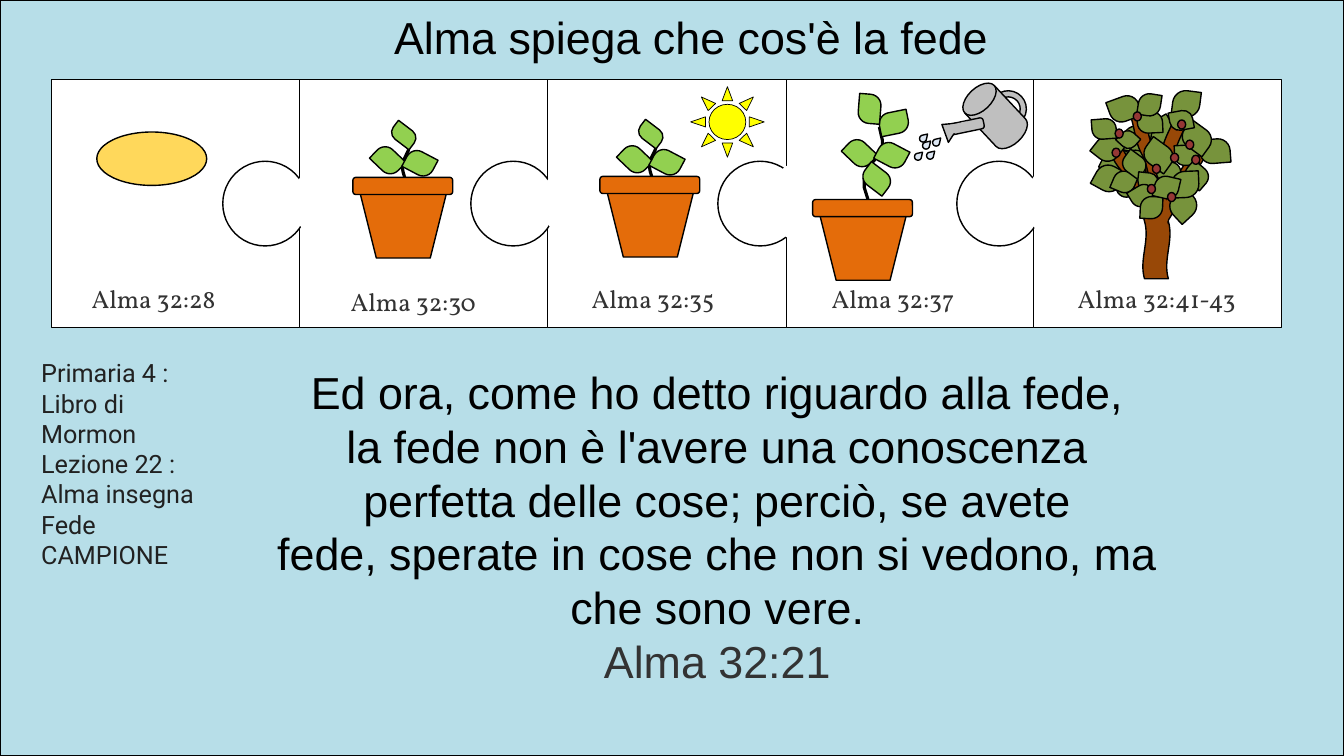
import math

import pptx
import pptx.dml.color
import pptx.enum.shapes
import pptx.enum.text
import pptx.util

RGB = pptx.dml.color.RGBColor
SHAPE = pptx.enum.shapes.MSO_SHAPE
ALIGN = pptx.enum.text.PP_ALIGN
Cm, Pt = pptx.util.Cm, pptx.util.Pt

CM_PER_INCH = 2.54
NO_BREAK_SPACE = chr(160)
STEM_ANGLE = 339.5
BLACK = RGB(0, 0, 0)
WHITE = RGB(0xFF, 0xFF, 0xFF)
SKY = RGB(0xB7, 0xDE, 0xE8)
SEED = RGB(0xFF, 0xD8, 0x5B)
SPROUT = RGB(0x92, 0xD0, 0x50)
CLAY = RGB(0xE4, 0x6C, 0x0A)
SUNLIGHT = RGB(0xFF, 0xFF, 0)
METAL = RGB(0xBF, 0xBF, 0xBF)
WATER = RGB(0xDC, 0xE6, 0xF2)
FOLIAGE = RGB(0x77, 0x93, 0x3C)
BARK = RGB(0x98, 0x48, 0x07)
BERRY = RGB(0x95, 0x37, 0x35)
GREY = RGB(0x33, 0x33, 0x33)
INK = RGB(0x21, 0x21, 0x21)


def draw(shapes, kind, box, fill, angle=0, line=BLACK, line_width=1, adjust=None):
    """Add a preset shape; box is left, top, width, height in inches."""
    shape = shapes.add_shape(kind, *[Cm(v * CM_PER_INCH) for v in box])
    shape.shadow.inherit = False
    shape.rotation = angle
    shape.fill.solid()
    shape.fill.fore_color.rgb = fill
    if line is None:
        shape.line.fill.background()
    else:
        shape.line.color.rgb = line
        shape.line.width = Pt(line_width)
    if kind == SHAPE.ROUND_2_DIAG_RECTANGLE:
        adjust = 0.5
    if adjust is not None:
        shape.adjustments[0] = adjust


def write(box, paragraphs, font, size, wrap=False, align=ALIGN.LEFT):
    """Add a text box; paragraphs are (text, colour) pairs, ~ is a no-break space."""
    frame = slide.shapes.add_textbox(*[Cm(v * CM_PER_INCH) for v in box]).text_frame
    frame.word_wrap = wrap
    frame.auto_size = pptx.enum.text.MSO_AUTO_SIZE.SHAPE_TO_FIT_TEXT
    for number, (text, colour) in enumerate(paragraphs):
        paragraph = frame.add_paragraph() if number else frame.paragraphs[0]
        paragraph.alignment = align
        run = paragraph.add_run()
        run.text = text.replace("~", NO_BREAK_SPACE)
        run.font.name = font
        run.font.size = Pt(size)
        run.font.color.rgb = colour


presentation = pptx.Presentation()
presentation.slide_width = Cm(13.33 * CM_PER_INCH)
presentation.slide_height = Cm(7.5 * CM_PER_INCH)
slide = presentation.slides.add_slide(presentation.slide_layouts[6])
draw(slide.shapes, SHAPE.RECTANGLE, (0, 0, 13.33, 7.5), SKY)

# Puzzle pieces: panels, their tabs, and the openings that cut the tabs
puzzle = slide.shapes.add_group_shape().shapes
for left in (0.51, 2.97, 5.43, 7.8, 10.25):
    draw(puzzle, SHAPE.RECTANGLE, (left, 0.79, 2.46, 2.46), WHITE)
for left in (2.21, 4.67, 7.12, 9.49):
    draw(puzzle, SHAPE.OVAL, (left, 1.6, 0.84, 0.84), WHITE)
for left in (2.91, 5.38, 7.62, 10.18):
    draw(puzzle, SHAPE.OVAL, (left, 1.58, 0.84, 0.84), WHITE, line=WHITE)

draw(slide.shapes, SHAPE.OVAL, (0.96, 1.31, 1.09, 0.53), SEED)
draw(slide.shapes, SHAPE.SUN, (6.85, 0.86, 0.73, 0.7), SUNLIGHT, line_width=0.5)

# Potted plants: leaves and stem centres are measured from the corner of the pot rim,
# stem points from the stem centre as they stand after the stem is turned
young_stem = [(-0.01, 0.28), (0, 0.25), (-0.01, 0.2), (-0.04, 0.1), (-0.05, 0.04), (-0.04, 0.03),
              (-0.03, -0.03), (-0.01, -0.07), (0.01, -0.11), (0.02, -0.15), (0.02, -0.19), (0, -0.27)]
young_leaves = [(0.2, -0.28, 0.29, 0.22, 43.7), (0.52, -0.25, 0.29, 0.22, 27.8),
                (0.42, -0.55, 0.17, 0.26, 307.3)]
tall_stem = [(-0.06, 0.44), (-0.04, 0.38), (-0.04, 0.31), (-0.09, 0.15), (-0.09, 0.06), (-0.08, 0.04),
             (-0.05, -0.06), (0.01, -0.12), (0.05, -0.19), (0.09, -0.26), (0.09, -0.32), (0.06, -0.45)]
tall_leaves = [(0.32, -0.57, 0.29, 0.22, 43.7), (0.64, -0.55, 0.29, 0.22, 27.8),
               (0.53, -0.35, 0.21, 0.29, 307.3), (0.66, -0.87, 0.29, 0.22, 348.6),
               (0.42, -1.01, 0.29, 0.22, 274.6)]
cosine, sine = math.cos(math.radians(STEM_ANGLE)), math.sin(math.radians(STEM_ANGLE))
for x, y, centre_x, centre_y, stem, leaves in (
        (3.5, 1.76, 0.54, -0.15, young_stem, young_leaves),
        (5.95, 1.75, 0.54, -0.15, young_stem, young_leaves),
        (8.06, 1.98, 0.6, -0.27, tall_stem, tall_leaves)):
    plant = slide.shapes.add_group_shape().shapes
    points = [(Cm((x + centre_x + dx * cosine + dy * sine) * CM_PER_INCH),
               Cm((y + centre_y - dx * sine + dy * cosine) * CM_PER_INCH)) for dx, dy in stem]
    builder = plant.build_freeform(*points[0])
    builder.add_line_segments(points[1:], close=False)
    stalk = builder.convert_to_shape()
    stalk.rotation = STEM_ANGLE
    stalk.shadow.inherit = False
    stalk.fill.background()
    stalk.line.color.rgb = BLACK
    stalk.line.width = Pt(2.25)
    draw(plant, SHAPE.TRAPEZOID, (x + 0.04, y + 0.03, 0.92, 0.77), CLAY, 180)
    draw(plant, SHAPE.ROUNDED_RECTANGLE, (x, y, 0.99, 0.17), CLAY)
    for dx, dy, width, height, angle in leaves:
        draw(plant, SHAPE.ROUND_2_DIAG_RECTANGLE, (x + dx, y + dy, width, height), SPROUT, angle)

# Watering can
can = slide.shapes.add_group_shape().shapes
draw(can, SHAPE.DONUT, (9.82, 0.9, 0.36, 0.36), METAL, 316.9, adjust=0.169)
draw(can, SHAPE.FLOWCHART_MAGNETIC_DISK, (9.67, 0.81, 0.4, 0.68), METAL, 316.9)
draw(can, SHAPE.ROUNDED_RECTANGLE, (9.52, 1.07, 0.11, 0.37), METAL, 258.2, adjust=0.258)
draw(can, SHAPE.ISOSCELES_TRIANGLE, (9.29, 1.2, 0.23, 0.15), METAL, 302.6)
draw(can, SHAPE.ROUNDED_RECTANGLE, (9.47, 1.17, 0.09, 0.19), METAL, 258.2, line=None, adjust=0.258)
for left, top in ((9.15, 1.41), (9.25, 1.38), (9.12, 1.34), (9.07, 1.52), (9.19, 1.51)):
    draw(can, SHAPE.TEAR, (left, top, 0.07, 0.07), WATER, adjust=1.286)

# Tree, from back to front; each row is left, top, width, height, angle
back_leaves = [
    (11.58, 1.31, 0.24, 0.3, 85.5), (11.38, 1.18, 0.27, 0.26, 329.9), (11.14, 1.25, 0.27, 0.26, 10.4),
    (11.15, 1.49, 0.22, 0.22, 15.3), (10.94, 1.47, 0.27, 0.26, 26.4), (10.86, 1.64, 0.27, 0.26, 28.9),
    (11.09, 1.73, 0.2, 0.24, 71.7)]
branches = [
    (10.9, 2.06, 1.14, 0.27, 270), (10.72, 1.6, 0.95, 0.15, 235.5), (11.24, 1.76, 0.95, 0.15, 298.7),
    (11.11, 1.45, 0.95, 0.15, 289.4), (10.91, 1.43, 0.95, 0.15, 252.4)]
crown_leaves = [
    (10.86, 1.35, 0.25, 0.25, 38.2), (11.63, 0.9, 0.27, 0.26, 187.3), (11.03, 0.93, 0.24, 0.3, 69.8),
    (11.1, 1.3, 0.18, 0.17, 42.2), (10.85, 1.16, 0.2, 0.24, 85.5), (11.3, 1.09, 0.21, 0.25, 87.1),
    (11.04, 1.7, 0.22, 0.21, 22.8), (11.15, 1.51, 0.2, 0.24, 126.4), (11.49, 1.59, 0.2, 0.24, 87.1),
    (11.37, 1.39, 0.24, 0.3, 126), (11.29, 0.93, 0.22, 0.22, 8.9), (11.67, 1.42, 0.2, 0.24, 87.1),
    (11.93, 1.35, 0.24, 0.3, 85.5), (11.75, 1.22, 0.24, 0.3, 126), (11.62, 1.08, 0.19, 0.23, 79.4),
    (11.77, 1.62, 0.2, 0.24, 130.9)]
low_leaves = [
    (11.3, 1.7, 0.17, 0.2, 276.1), (11.23, 1.82, 0.2, 0.24, 238.6), (11.6, 1.91, 0.27, 0.26, 137.2),
    (11.62, 1.7, 0.27, 0.26, 177.7), (11.31, 1.95, 0.22, 0.22, 182.6), (11.45, 1.75, 0.24, 0.22, 193.2)]
berries = [(left, top, 0.08, 0.09, 0) for left, top in (
    (11.03, 1.47), (11.82, 1.54), (11.76, 1.39), (11.06, 1.28), (11.24, 1.11),
    (11.68, 1.19), (11.43, 1.63), (11.61, 1.52), (11.38, 1.83), (11.58, 1.91))]
tree = slide.shapes.add_group_shape().shapes
for kind, fill, line, rows in (
        (SHAPE.ROUND_2_DIAG_RECTANGLE, FOLIAGE, BLACK, back_leaves),
        (SHAPE.DOUBLE_WAVE, BARK, BLACK, branches),
        (SHAPE.OVAL, BARK, None, [(11.39, 1.81, 0.19, 0.67, 0)]),
        (SHAPE.ROUND_2_DIAG_RECTANGLE, FOLIAGE, BLACK, crown_leaves + low_leaves),
        (SHAPE.OVAL, BERRY, BLACK, berries)):
    for *box, angle in rows:
        draw(tree, kind, box, fill, angle, line)

for left, top, width, verse in (
        (0.81, 2.76, 1.48, "28"), (3.38, 2.79, 1.48, "30"), (5.77, 2.76, 1.48, "35"),
        (8.15, 2.76, 1.48, "37"), (10.59, 2.76, 1.84, "41-43")):
    write((left, top, width, 0.4), [("Alma 32:" + verse, GREY)], "Vollkorn", 18)

write((3.81, 0.05, 6.68, 0.64), [("Alma spiega che cos'è la fede", BLACK)], "Arial", 32)
write((2.64, 3.57, 8.95, 3.33),
      [("Ed ora, come ho detto riguardo alla fede, la~fede~non è l'avere una conoscenza "
        "perfetta delle cose; perciò, se avete fede,~sperate~in cose che~non~si vedono, "
        "ma che sono vere.", BLACK),
       ("Alma 32:21", GREY)], "Arial", 32, wrap=True, align=ALIGN.CENTER)
write((0.31, 3.5, 1.9, 2.22),
      [("Primaria 4 : Libro di Mormon Lezione 22 : Alma insegna Fede CAMPIONE", INK)],
      "Roboto", 18, wrap=True)

presentation.save("out.pptx")
